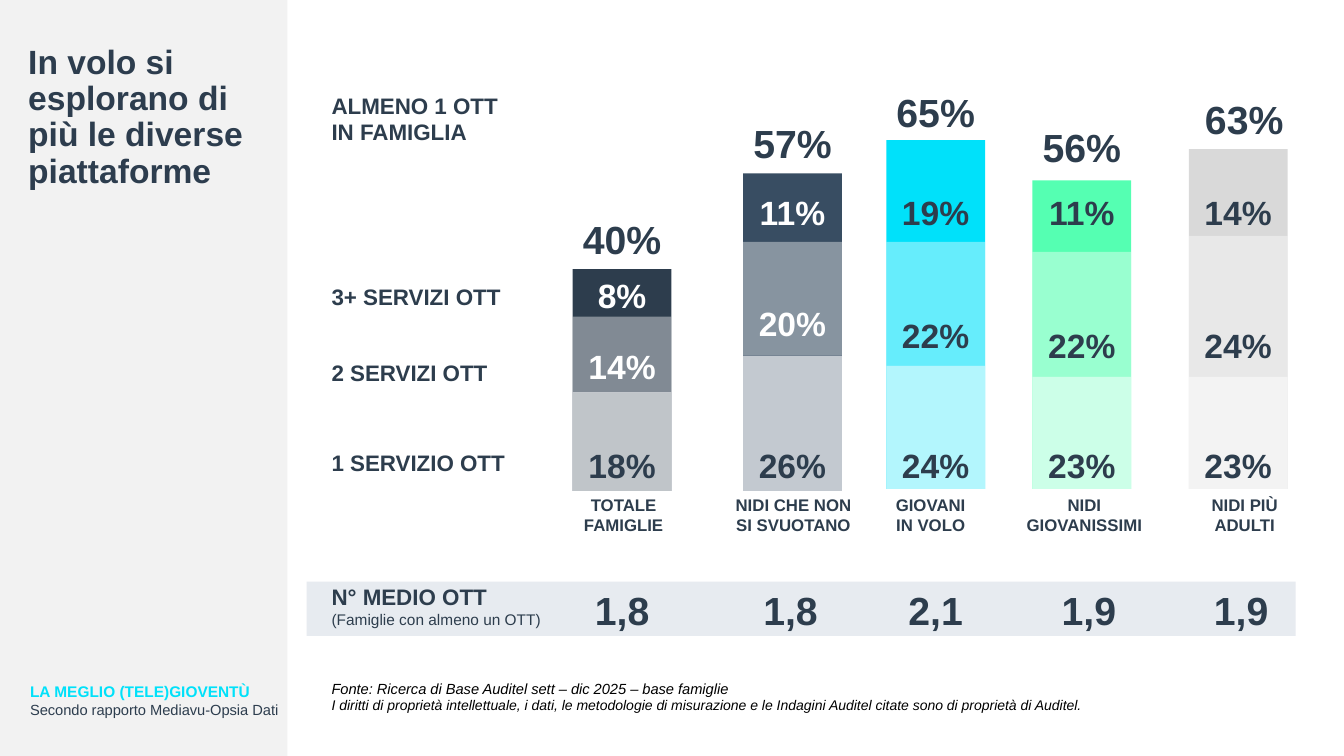
import collections

import lxml.etree
import pptx
import pptx.dml.color
import pptx.enum.shapes
import pptx.enum.text
import pptx.oxml.ns
import pptx.util

Inches = pptx.util.Inches
Align = pptx.enum.text.PP_ALIGN

INK = "2D3D4D"
WHITE = "FFFFFF"
FONT = "Arial"
BAR_WIDTH = 0.98
BASELINE = 4.87
LEGEND_LEFT = 3.19

Bar = collections.namedtuple(
    "Bar",
    "left color value_color tops bottom total total_top values value_tops "
    "name name_left name_width mean mean_center total_shift",
)

BARS = [
    Bar(5.68, "2D3D4D", WHITE, (2.67, 3.14, 3.89), 4.87, "40%", 2.14,
        ("8%", "14%", "18%"), (2.73, 3.43, 4.41),
        "TOTALE FAMIGLIE", 5.54, 1.29, "1,8", 6.17, 0),
    Bar(7.37, "384D62", WHITE, (1.72, 2.4, 3.53), 4.87, "57%", 1.18,
        ("11%", "20%", "26%"), (1.9, 3.01, 4.41),
        "NIDI CHE NON SI SVUOTANO", 7.18, 1.38, "1,8", 7.84, 0),
    Bar(8.79, "00E1FA", INK, (1.39, 2.4, 3.63), 4.85, "65%", 0.88,
        ("19%", "22%", "24%"), (1.9, 3.12, 4.41),
        "GIOVANI IN VOLO", 8.74, 0.98, "2,1", 9.28, 0),
    Bar(10.24, "55FFB2", INK, (1.79, 2.5, 3.74), 4.85, "56%", 1.22,
        ("11%", "22%", "23%"), (1.9, 3.22, 4.41),
        "NIDI GIOVANISSIMI", 10.01, 1.49, "1,9", 10.8, 0),
    Bar(11.79, "D9D9D9", INK, (1.48, 2.34, 3.74), 4.85, "63%", 0.95,
        ("14%", "24%", "23%"), (1.9, 3.22, 4.41),
        "NIDI PIÙ ADULTI", 11.75, 1.19, "1,9", 12.31, 0.06),
]

LEGEND = [
    (0.86, 0.91, ["ALMENO 1 OTT", "IN FAMIGLIA"]),
    (2.76, 0.37, ["3+ SERVIZI OTT"]),
    (3.51, 0.37, ["2 SERVIZI OTT"]),
    (4.41, 0.37, ["1 SERVIZIO OTT"]),
]


def rgb(color):
    return pptx.dml.color.RGBColor.from_string(color)


def add_rectangle(slide, left, top, width, height, color, opacity=100):
    shape = slide.shapes.add_shape(
        pptx.enum.shapes.MSO_SHAPE.RECTANGLE,
        Inches(left), Inches(top), Inches(width), Inches(height))
    shape.shadow.inherit = False
    shape.line.fill.background()
    shape.fill.solid()
    shape.fill.fore_color.rgb = rgb(color)
    if opacity < 100:
        qn = pptx.oxml.ns.qn
        fill_color = shape.element.spPr.find(qn("a:solidFill")).find(qn("a:srgbClr"))
        alpha = lxml.etree.SubElement(fill_color, qn("a:alpha"))
        alpha.set("val", str(opacity * 1000))
    return shape


def add_run(paragraph, text, size, color=INK, bold=True, italic=False):
    run = paragraph.add_run()
    run.text = text
    run.font.name = FONT
    run.font.size = pptx.util.Pt(size)
    run.font.bold = bold
    run.font.italic = italic
    run.font.color.rgb = rgb(color)


def add_text(slide, left, top, width, height, lines, align=Align.LEFT, inset=True):
    box = slide.shapes.add_textbox(
        Inches(left), Inches(top), Inches(width), Inches(height))
    frame = box.text_frame
    frame.word_wrap = True
    if not inset:
        frame.margin_left = frame.margin_right = 0
        frame.margin_top = frame.margin_bottom = 0
    for index, (text, style) in enumerate(lines):
        paragraph = frame.add_paragraph() if index else frame.paragraphs[0]
        paragraph.alignment = align
        add_run(paragraph, text, **style)


def add_figure(slide, center, top, text, size, color=INK):
    width = 0.9
    add_text(slide, center - width / 2, top, width, size / 60,
             [(text, dict(size=size, color=color))], Align.CENTER, inset=False)


def add_title(slide, text):
    title = slide.shapes.title
    title.left, title.top = Inches(0.18), Inches(0.4)
    title.width, title.height = Inches(2.6), Inches(3.35)
    frame = title.text_frame
    frame.word_wrap = True
    frame.auto_size = pptx.enum.text.MSO_AUTO_SIZE.NONE
    frame.vertical_anchor = pptx.enum.text.MSO_ANCHOR.TOP
    paragraph = frame.paragraphs[0]
    paragraph.alignment = Align.LEFT
    paragraph.line_spacing = 0.9
    add_run(paragraph, text, 24, "2D3D4E")
    return title


def add_side_panel(slide):
    title = add_title(slide, "In volo si esplorano di più le diverse piattaforme")
    panel = add_rectangle(slide, 0, 0, 2.85, 7.5, "F2F2F2")
    title.element.addprevious(panel.element)
    add_text(slide, 0.2, 6.72, 5.78, 0.46, [
        ("LA MEGLIO (TELE)GIOVENTÙ", dict(size=11, color="00E1FA")),
        ("Secondo rapporto Mediavu-Opsia Dati",
         dict(size=10.5, color="2D3D4E", bold=False)),
    ])


def add_bar(slide, bar):
    center = bar.left + BAR_WIDTH / 2
    top, middle, low = bar.tops
    add_rectangle(slide, bar.left, top, BAR_WIDTH, bar.bottom - top, bar.color)
    add_rectangle(slide, bar.left, middle, BAR_WIDTH, low - middle, WHITE, 40)
    add_rectangle(slide, bar.left, low, BAR_WIDTH, BASELINE - low, WHITE, 70)
    value_colors = (bar.value_color, bar.value_color, INK)
    for value, value_top, color in zip(bar.values, bar.value_tops, value_colors):
        add_figure(slide, center, value_top, value, 24, color)
    add_figure(slide, center + bar.total_shift, bar.total_top, bar.total, 28)
    add_text(slide, bar.name_left, 4.86, bar.name_width, 0.5,
             [(bar.name, dict(size=12))], Align.CENTER)
    add_figure(slide, bar.mean_center, 5.82, bar.mean, 28)


def add_legend(slide):
    for top, height, lines in LEGEND:
        add_text(slide, LEGEND_LEFT, top, 2.53, height,
                 [(line, dict(size=16)) for line in lines])
    add_text(slide, LEGEND_LEFT, 5.74, 2.53, 0.56, [
        ("N° MEDIO OTT", dict(size=16)),
        ("(Famiglie con almeno un OTT)", dict(size=11, bold=False)),
    ])


def add_source(slide):
    style = dict(color="000000", bold=False, italic=True)
    add_text(slide, LEGEND_LEFT, 6.69, 7.9, 0.62, [
        ("Fonte: Ricerca di Base Auditel sett – dic 2025 – base famiglie",
         dict(style, size=10.5)),
        ("I diritti di proprietà intellettuale, i dati, le metodologie di misurazione "
         "e le Indagini Auditel citate sono di proprietà di Auditel.",
         dict(style, size=10)),
    ])


def main():
    presentation = pptx.Presentation()
    presentation.slide_width = Inches(13.33)
    presentation.slide_height = Inches(7.5)
    slide = presentation.slides.add_slide(presentation.slide_layouts[5])
    add_side_panel(slide)
    add_rectangle(slide, 3.04, 5.77, 9.81, 0.54, "E7EBF0")
    add_legend(slide)
    for bar in BARS:
        add_bar(slide, bar)
    add_source(slide)
    presentation.save("out.pptx")


if __name__ == "__main__":
    main()
